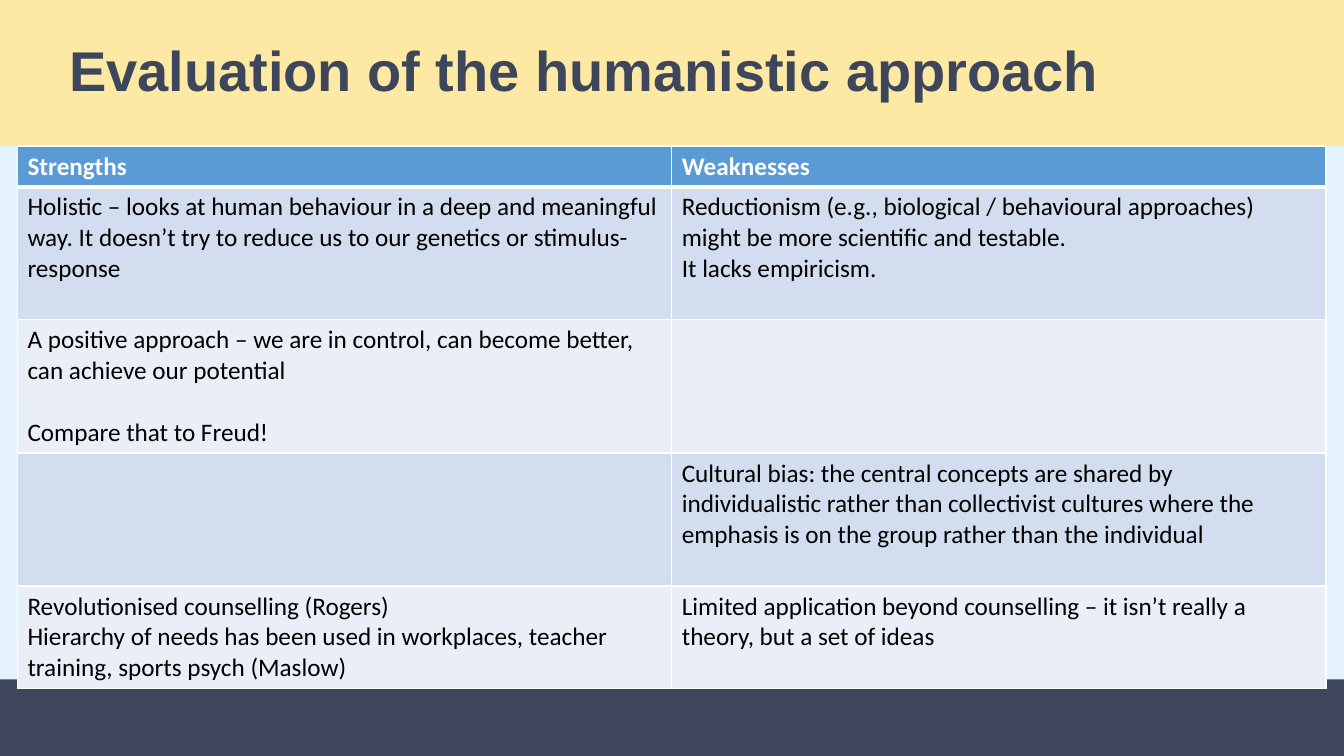
from lxml.etree import SubElement
from pptx import Presentation
from pptx.dml.color import RGBColor
from pptx.enum.shapes import MSO_SHAPE as Shape
from pptx.enum.text import MSO_ANCHOR as Anchor, PP_ALIGN as Align
from pptx.oxml.ns import qn
from pptx.util import Cm, Pt

SKY = RGBColor(0xE5, 0xF3, 0xFF)
NAVY = RGBColor(0x3D, 0x46, 0x5A)
CREAM = RGBColor(0xFE, 0xE9, 0xA4)
BLUE = RGBColor(0x5B, 0x9B, 0xD5)
BANDS = (RGBColor(0xEA, 0xEF, 0xF7), RGBColor(0xD2, 0xDE, 0xEF))
WHITE = RGBColor(0xFF, 0xFF, 0xFF)
BLACK = RGBColor(0, 0, 0)

SLIDE_WIDTH, SLIDE_HEIGHT = Cm(33.87), Cm(19.05)
TITLE_HEIGHT = Cm(3.68)
FOOTER_TOP = Cm(17.12)
TABLE_LEFT, COLUMN_WIDTH = Cm(0.44), Cm(16.49)
ROW_HEIGHTS = [Cm(height) for height in (1.03, 3.35, 3.35, 3.35, 2.57)]

ROWS = [
    (["Strengths"], ["Weaknesses"]),
    (
        ["Holistic – looks at human behaviour in a deep and meaningful way. "
         "It doesn’t try to reduce us to our genetics or stimulus-response"],
        ["Reductionism (e.g., biological / behavioural approaches) "
         "might be more scientific and testable.",
         "It lacks empiricism."],
    ),
    (
        ["A positive approach – we are in control, can become better, "
         "can achieve our potential",
         "Compare that to Freud!"],
        [],
    ),
    (
        [],
        ["Cultural bias: the central concepts are shared by individualistic "
         "rather than collectivist cultures where the emphasis is on the "
         "group rather than the individual"],
    ),
    (
        ["Revolutionised counselling (Rogers)",
         "Hierarchy of needs has been used in workplaces, teacher training, "
         "sports psych (Maslow)"],
        ["Limited application beyond counselling – it isn’t really a theory, "
         "but a set of ideas"],
    ),
]
SPACED_ROW = 2


def set_font(paragraph, name, size, color, bold):
    font = paragraph.font
    font.name, font.size, font.bold = name, Pt(size), bold
    font.color.rgb = color


def add_band(slide, top, height, color):
    shape = slide.shapes.add_shape(Shape.RECTANGLE, 0, top, SLIDE_WIDTH, height)
    shape.shadow.inherit = False
    shape.fill.solid()
    shape.fill.fore_color.rgb = color
    shape.line.fill.background()
    return shape


def add_title(slide, text):
    frame = add_band(slide, 0, TITLE_HEIGHT, CREAM).text_frame
    frame.word_wrap = True
    frame.vertical_anchor = Anchor.MIDDLE
    frame.margin_left = Cm(1.75)
    paragraph = frame.paragraphs[0]
    paragraph.text = text
    paragraph.alignment = Align.LEFT
    paragraph.line_spacing = 0.9
    set_font(paragraph, "Arial", 40, NAVY, True)


def set_borders(cell, top, bottom):
    properties = cell._tc.get_or_add_tcPr()
    widths = {"a:lnL": 1, "a:lnR": 1, "a:lnT": top, "a:lnB": bottom}
    for position, (tag, width) in enumerate(widths.items()):
        line = SubElement(properties, qn(tag), w=str(Pt(width)))
        fill = SubElement(line, qn("a:solidFill"))
        SubElement(fill, qn("a:srgbClr"), val=str(WHITE))
        properties.insert(position, line)


def fill_cell(cell, texts, row):
    header = row == 0
    cell.fill.solid()
    cell.fill.fore_color.rgb = BLUE if header else BANDS[row % 2]
    set_borders(cell, 3 if row == 1 else 1, 3 if header else 1)
    frame = cell.text_frame
    for index, text in enumerate(texts or [""]):
        paragraph = frame.add_paragraph() if index else frame.paragraphs[0]
        paragraph.text = text
        if index and row == SPACED_ROW:
            paragraph.space_before = Pt(22)
        set_font(paragraph, "Calibri", 18, WHITE if header else BLACK, header)


def add_evaluation_table(slide):
    table = slide.shapes.add_table(
        len(ROWS), 2, TABLE_LEFT, TITLE_HEIGHT, 2 * COLUMN_WIDTH, sum(ROW_HEIGHTS)
    ).table
    for column in table.columns:
        column.width = COLUMN_WIDTH
    for row, (height, contents) in enumerate(zip(ROW_HEIGHTS, ROWS)):
        table.rows[row].height = height
        for column, texts in enumerate(contents):
            fill_cell(table.cell(row, column), texts, row)


def main():
    presentation = Presentation()
    presentation.slide_width = SLIDE_WIDTH
    presentation.slide_height = SLIDE_HEIGHT
    slide = presentation.slides.add_slide(presentation.slide_layouts[6])
    slide.background.fill.solid()
    slide.background.fill.fore_color.rgb = SKY
    add_band(slide, FOOTER_TOP, SLIDE_HEIGHT - FOOTER_TOP, NAVY)
    add_title(slide, "Evaluation of the humanistic approach")
    add_evaluation_table(slide)
    presentation.save("out.pptx")


if __name__ == "__main__":
    main()
